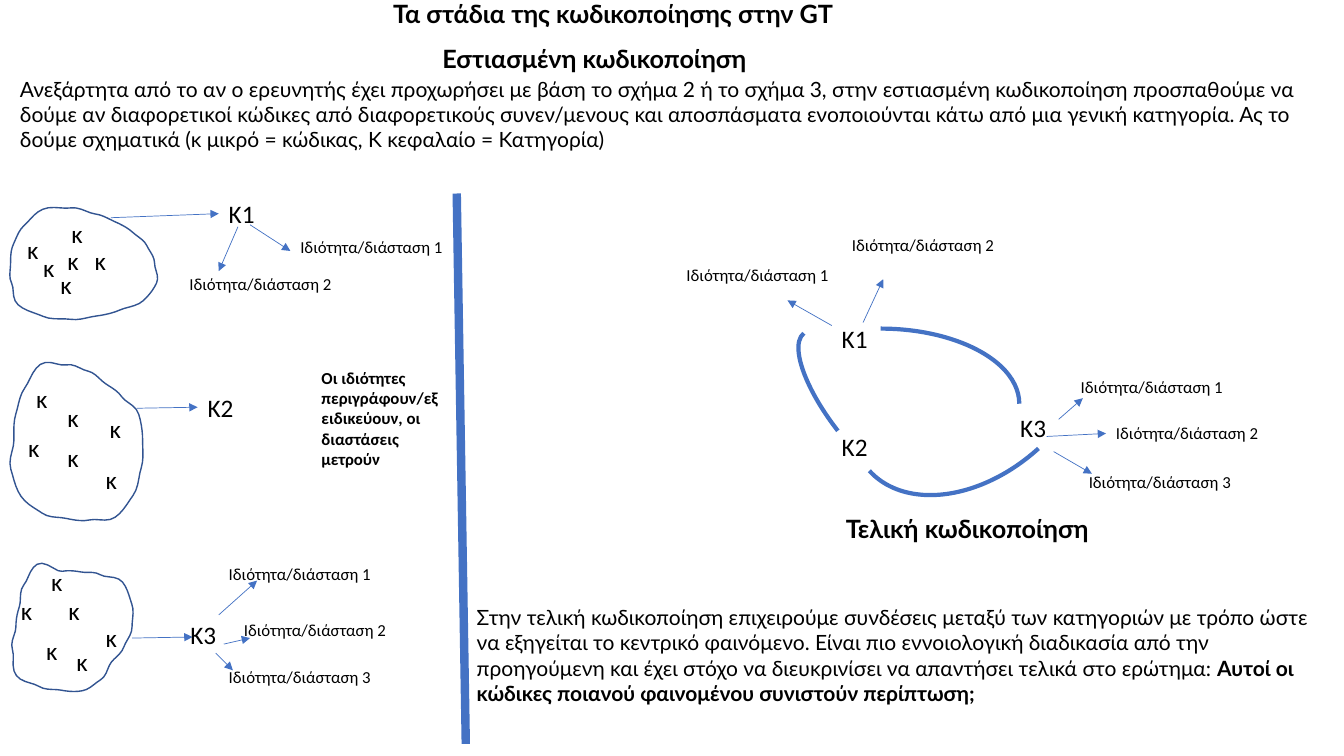
from collections import namedtuple
from math import cos, pi, sin
from lxml import etree
from pptx import Presentation, util as u
from pptx.dml.color import RGBColor
from pptx.enum import shapes, text
from pptx.oxml.ns import qn

COLORS = {"ink": "000000", "arrow": "4472C4", "outline": "325491"}
BODY, LABEL = "Lato", "Calibri"
TITLE_SIZE, TEXT_SIZE, NOTE_SIZE = 18, 15, 12
CODE_COLS, CATEGORY_COLS, PROPERTY_COLS = 3, 5.2, 16.9
LINE_ROWS, NOTE_ROWS = 4, 3
STEPS_PER_RADIUS = 5

Cluster = namedtuple("Cluster", "center half_size radii codes arrow")
Category = namedtuple("Category", "number place properties")
Property = namedtuple("Property", "number place arrow")

deck = Presentation()
deck.slide_width, deck.slide_height = u.Inches(13.33), u.Inches(7.5)
slide = deck.slides.add_slide(deck.slide_layouts[6])
cell = deck.slide_width / 133.3


def write(content, place, cols, rows, size, font=LABEL, bold=False, bold_ending=""):
    box = slide.shapes.add_textbox(*(round(n * cell) for n in (*place, cols, rows)))
    frame = box.text_frame
    frame.word_wrap = True
    frame.auto_size = text.MSO_AUTO_SIZE.SHAPE_TO_FIT_TEXT
    for part, heavy in ((content, bold), (bold_ending, True)):
        if part:
            run = frame.paragraphs[0].add_run()
            run.text = part
            run.font.size, run.font.name, run.font.bold = u.Pt(size), font, heavy
            run.font.color.rgb = RGBColor.from_string(COLORS["ink"])


def connect(start, end, width=0.5, arrow=True):
    link = slide.shapes.add_connector(
        shapes.MSO_CONNECTOR.STRAIGHT, *(round(n * cell) for n in start + end))
    link.line.width = u.Pt(width)
    link.line.color.rgb = RGBColor.from_string(COLORS["arrow"])
    if arrow:
        etree.SubElement(link.line._get_or_add_ln(), qn("a:tailEnd"), type="triangle")
    etree.SubElement(link._element.spPr, qn("a:effectLst"))


headings = [
    ("Τα στάδια της κωδικοποίησης στην GT", (38, -0.7), 55.8),
    ("Εστιασμένη κωδικοποίηση", (42.9, 3.8), 43.4),
    ("Τελική κωδικοποίηση", (82.9, 50.4), 34.2),
]
for heading, place, cols in headings:
    write(heading, place, cols, LINE_ROWS, TITLE_SIZE, BODY, bold=True)

write("Ανεξάρτητα από το αν ο ερευνητής έχει προχωρήσει με βάση το σχήμα 2 ή το σχήμα 3, "
      "στην εστιασμένη κωδικοποίηση προσπαθούμε να δούμε αν διαφορετικοί κώδικες από "
      "διαφορετικούς συνεν/μενους και αποσπάσματα ενοποιούνται κάτω από μια γενική κατηγορία. "
      "Ας το δούμε σχηματικά (κ μικρό = κώδικας, Κ κεφαλαίο = Κατηγορία)",
      (1, 7.1), 130.4, 11.1, TEXT_SIZE, BODY)
write("Στην τελική κωδικοποίηση επιχειρούμε συνδέσεις μεταξύ των κατηγοριών με τρόπο ώστε να "
      "εξηγείται το κεντρικό φαινόμενο. Είναι πιο εννοιολογική διαδικασία από την προηγούμενη "
      "και έχει στόχο να διευκρινίσει να απαντήσει τελικά στο ερώτημα: ",
      (46.3, 59.5), 87.1, 13.6, TEXT_SIZE, BODY,
      bold_ending="Αυτοί οι κώδικες ποιανού φαινομένου συνιστούν περίπτωση;")
write("Οι ιδιότητες περιγράφουν/εξειδικεύουν, οι διαστάσεις μετρούν",
      (30.9, 36), 13.6, 11.1, NOTE_SIZE, bold=True)
connect((45.3, 19.2), (46.2, 73.8), width=6, arrow=False)

clusters = [
    Cluster(center=(8.3, 26.1), half_size=(7.25, 5.5),
            radii=[0.97, 1.06, 1.06, 0.98, 0.97, 1.03, 1.11, 1.17, 1.05,
                   1, 1.02, 1.06, 1.12, 1.01, 0.9, 0.86, 0.87, 0.92],
            codes=[(-5.1, -1.3), (-3.5, 0.4), (-1.8, 2.1), (1.6, -0.3), (-1.1, -0.3), (-0.7, -2.9)],
            arrow=((11, 21.6), (21.7, 21.2))),
    Cluster(center=(7.7, 43.7), half_size=(6.65, 7.85),
            radii=[0.97, 1.01, 1.08, 1.12, 1.02, 1, 1.06, 1.1, 1.06,
                   0.95, 0.98, 1.03, 1.11, 0.97, 0.89, 0.83, 0.86, 0.97],
            codes=[(-3.6, -4.2), (-0.5, -2.3), (-4.4, 0.7), (-0.5, 1.7), (3.7, -1.2), (3.3, 3.9)],
            arrow=((13.6, 40.5), (19.6, 40.4))),
    Cluster(center=(7.1, 62.2), half_size=(6, 6.3),
            radii=[1, 0.92, 0.86, 0.96, 1.02, 1.01, 1.08, 1.19, 1.04,
                   0.92, 0.92, 1.03, 1.14, 0.89, 0.88, 0.95, 1.1, 1.06],
            codes=[(-1.5, -4.5), (0.2, -1.6), (-4.5, -1.6), (-2, 2.3), (3.9, 1), (1, 3.4)],
            arrow=((13.1, 63.3), (19.1, 63.2))),
]
outlines = []
for cluster in clusters:
    middle_col, middle_row = cluster.center
    half_cols, half_rows = cluster.half_size
    following = cluster.radii[1:] + cluster.radii[:1]
    edge = []
    for index, (radius, next_radius) in enumerate(zip(cluster.radii, following)):
        for step in range(STEPS_PER_RADIUS):
            share = step / STEPS_PER_RADIUS
            reach = radius + (next_radius - radius) * (1 - cos(pi * share)) / 2
            angle = 2 * pi * (index + share) / len(cluster.radii)
            edge.append((round(cell * (middle_col + half_cols * reach * cos(angle))),
                         round(cell * (middle_row + half_rows * reach * sin(angle)))))
    builder = slide.shapes.build_freeform(*edge[0])
    builder.add_line_segments(edge[1:])
    outlines.append((builder.convert_to_shape(), 1, "outline"))

    for right, down in cluster.codes:
        corner = (middle_col + right - CODE_COLS / 2, middle_row + down - LINE_ROWS / 2)
        write("κ", corner, CODE_COLS, LINE_ROWS, TITLE_SIZE)
    connect(*cluster.arrow)

focused_coding = [
    Category(1, (21.7, 19.2), [
        Property(1, (28.8, 23), ((24.8, 22.3), (28.8, 24.9))),
        Property(2, (17.8, 26.7), ((23.6, 22.5), (21.7, 26.9)))]),
    Category(2, (19.6, 38.4), []),
    Category(3, (17.9, 60.9), [
        Property(1, (21.7, 55.4), ((21.7, 61), (25.5, 57.6))),
        Property(2, (23.2, 61), ((22.2, 63.9), (24.8, 63.3))),
        Property(3, (21.7, 65.7), ((21.4, 64.8), (23.1, 66.5)))]),
]
final_coding = [
    Category(1, (82.5, 31.6), [
        Property(1, (67.1, 25.8), ((82.5, 32.3), (78.1, 29.8))),
        Property(2, (83.5, 22.8), ((85.6, 32), (87.6, 27.7)))]),
    Category(2, (82.5, 42.3), []),
    Category(3, (100.2, 40.4), [
        Property(1, (106.2, 36.9), ((105, 41.6), (107.4, 39.5))),
        Property(2, (109.7, 41.4), ((103.8, 43.3), (109.7, 43))),
        Property(3, (107, 46.3), ((104.5, 44.8), (108.3, 47)))]),
]
for category in focused_coding + final_coding:
    write(f"Κ{category.number}", category.place, CATEGORY_COLS, LINE_ROWS, TITLE_SIZE)
    for trait in category.properties:
        write(f"Ιδιότητα/διάσταση {trait.number}", trait.place,
              PROPERTY_COLS, NOTE_ROWS, NOTE_SIZE)
        connect(*trait.arrow)

category_links = {
    "Κ1 Κ3": ((73.6, 32.6, 27.5, 14.9), 0),
    "Κ2 Κ1": ((76, 37.4, 19.4, 6.6), 232),
    "Κ3 Κ2": ((82.6, 27.7, 27.8, 19.3), 137.7),
}
for frame, turn in category_links.values():
    bend = slide.shapes.add_shape(shapes.MSO_SHAPE.ARC, *(round(n * cell) for n in frame))
    bend.rotation = turn
    outlines.append((bend, 3, "arrow"))

for outline, width, color in outlines:
    outline.shadow.inherit = False
    outline.fill.background()
    outline.line.width = u.Pt(width)
    outline.line.color.rgb = RGBColor.from_string(COLORS[color])

deck.save("out.pptx")
